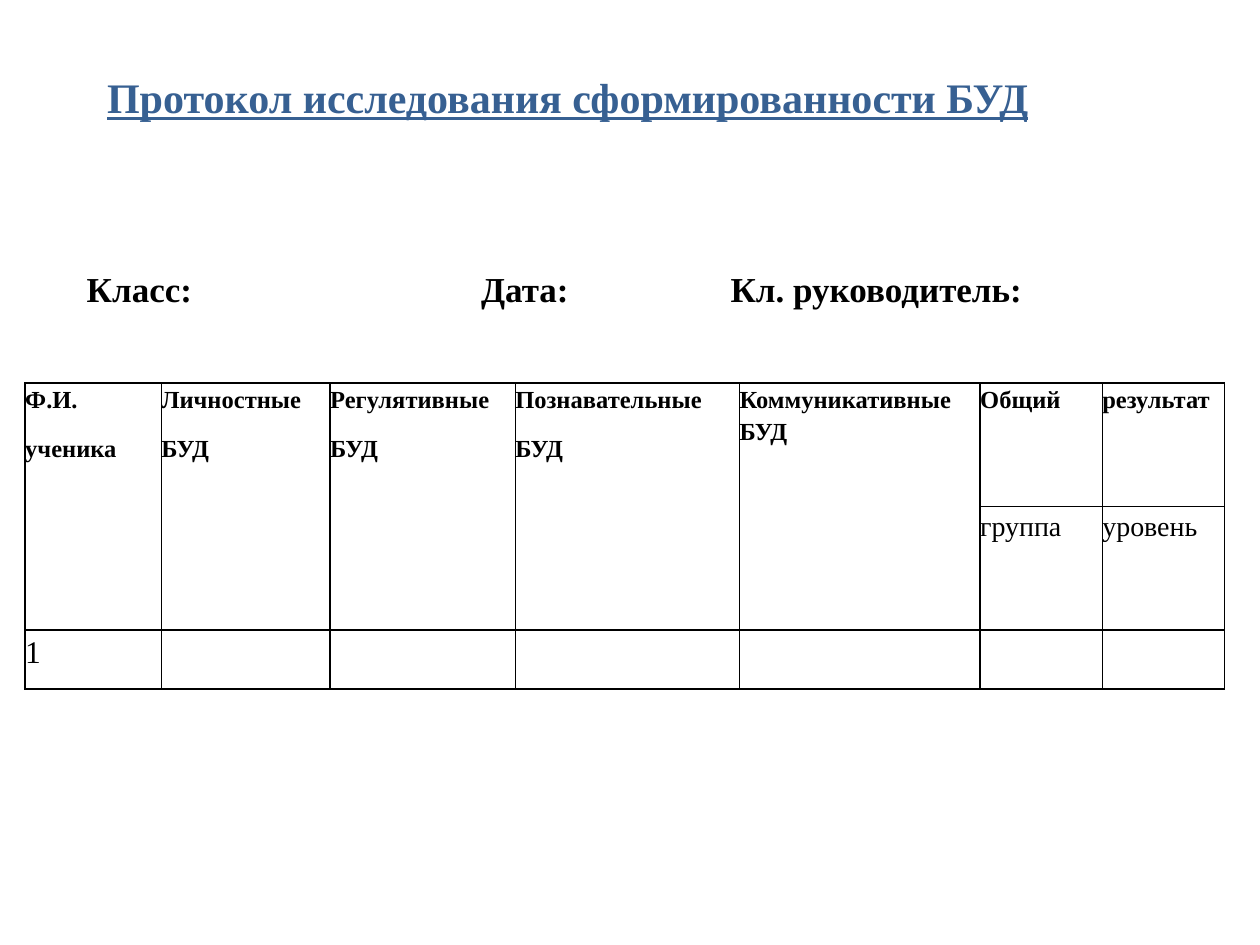
import pptx
import pptx.dml.color
import pptx.enum.text
import pptx.oxml
import pptx.oxml.ns
import pptx.util
from pptx.util import Inches

FONT = "Times New Roman"
BLUE = pptx.dml.color.RGBColor(0x37, 0x60, 0x92)
BLACK = pptx.dml.color.RGBColor(0, 0, 0)
WHITE = pptx.dml.color.RGBColor(0xFF, 0xFF, 0xFF)

COLUMN_WIDTHS = [1.08, 1.34, 1.47, 1.78, 1.91, 0.97, 0.97]
ROW_HEIGHTS = [0.98, 0.98, 0.47]
HEADINGS = [
    ["Ф.И.", "ученика"],
    ["Личностные", "БУД"],
    ["Регулятивные", "БУД"],
    ["Познавательные", "БУД"],
    ["Коммуникативные БУД"],
    ["Общий"],
    ["результат"],
]
SUBHEADINGS = {5: "группа", 6: "уровень"}


def add_span(para, text, size, bold=False, color=BLACK):
    span = para.add_run()
    span.text = text
    span.font.name = FONT
    span.font.size = pptx.util.Pt(size)
    span.font.bold = bold
    span.font.color.rgb = color
    return span


def set_title(page, left, top, width, height):
    title = page.shapes.title
    title.left, title.top, title.width, title.height = left, top, width, height
    title.text_frame.vertical_anchor = pptx.enum.text.MSO_ANCHOR.TOP
    para = title.text_frame.paragraphs[0]
    para.alignment = pptx.enum.text.PP_ALIGN.LEFT
    span = add_span(para, "Протокол исследования сформированности БУД", 24, True, BLUE)
    span.font.underline = True


def add_tab_stops(para, positions):
    properties = para._p.get_or_add_pPr()
    tabs = pptx.oxml.parse_xml(f'<a:tabLst {pptx.oxml.ns.nsdecls("a")}/>')
    for position in positions:
        tabs.append(pptx.oxml.parse_xml(
            f'<a:tab {pptx.oxml.ns.nsdecls("a")} pos="{position}" algn="l"/>'))
    properties.append(tabs)


def add_class_details(page, left, top, width, height):
    box = page.shapes.add_textbox(left, top, width, height)
    box.text_frame.word_wrap = True
    para = box.text_frame.paragraphs[0]
    add_tab_stops(para, [Inches(3.13), Inches(5.11)])
    add_span(para, "Класс:\tДата:\tКл. руководитель:", 20, True)


def style_cell(cell):
    """Give a cell black borders, a white fill and no margins."""
    properties = cell._tc.get_or_add_tcPr()
    for side in ("lnL", "lnR", "lnT", "lnB"):
        properties.append(pptx.oxml.parse_xml(
            f'<a:{side} {pptx.oxml.ns.nsdecls("a")} w="{pptx.util.Pt(1)}">'
            f'<a:solidFill><a:srgbClr val="{BLACK}"/></a:solidFill></a:{side}>'))
    cell.fill.solid()
    cell.fill.fore_color.rgb = WHITE
    cell.margin_left = cell.margin_right = cell.margin_top = cell.margin_bottom = 0


def write_cell(cell, lines, size, bold=False):
    frame = cell.text_frame
    for index, line in enumerate(lines):
        para = frame.add_paragraph() if index else frame.paragraphs[0]
        para.line_spacing = 1.15
        para.space_after = pptx.util.Pt(10)
        add_span(para, line, size, bold)


def add_results_table(page, left, top):
    table = page.shapes.add_table(
        len(ROW_HEIGHTS), len(COLUMN_WIDTHS), left, top,
        Inches(sum(COLUMN_WIDTHS)), Inches(sum(ROW_HEIGHTS))).table
    table.first_row = table.horz_banding = False
    for column, width in zip(table.columns, COLUMN_WIDTHS):
        column.width = Inches(width)
    for row, height in zip(table.rows, ROW_HEIGHTS):
        row.height = Inches(height)
    for cell in table.iter_cells():
        style_cell(cell)
    for index, lines in enumerate(HEADINGS):
        heading = table.cell(0, index)
        write_cell(heading, lines, 14, True)
        if index in SUBHEADINGS:
            write_cell(table.cell(1, index), [SUBHEADINGS[index]], 16)
        else:
            heading.merge(table.cell(1, index))
    write_cell(table.cell(2, 0), ["1"], 18)


def main():
    deck = pptx.Presentation()
    deck.slide_width, deck.slide_height = Inches(10), Inches(7.5)
    page = deck.slides.add_slide(deck.slide_layouts.get_by_name("Title Only"))
    set_title(page, Inches(0.75), Inches(0.52), Inches(7.72), Inches(0.5))
    add_results_table(page, Inches(0.2), Inches(3.04))
    add_class_details(page, Inches(0.59), Inches(2.07), Inches(8.27), Inches(0.74))
    deck.save("out.pptx")


if __name__ == "__main__":
    main()
